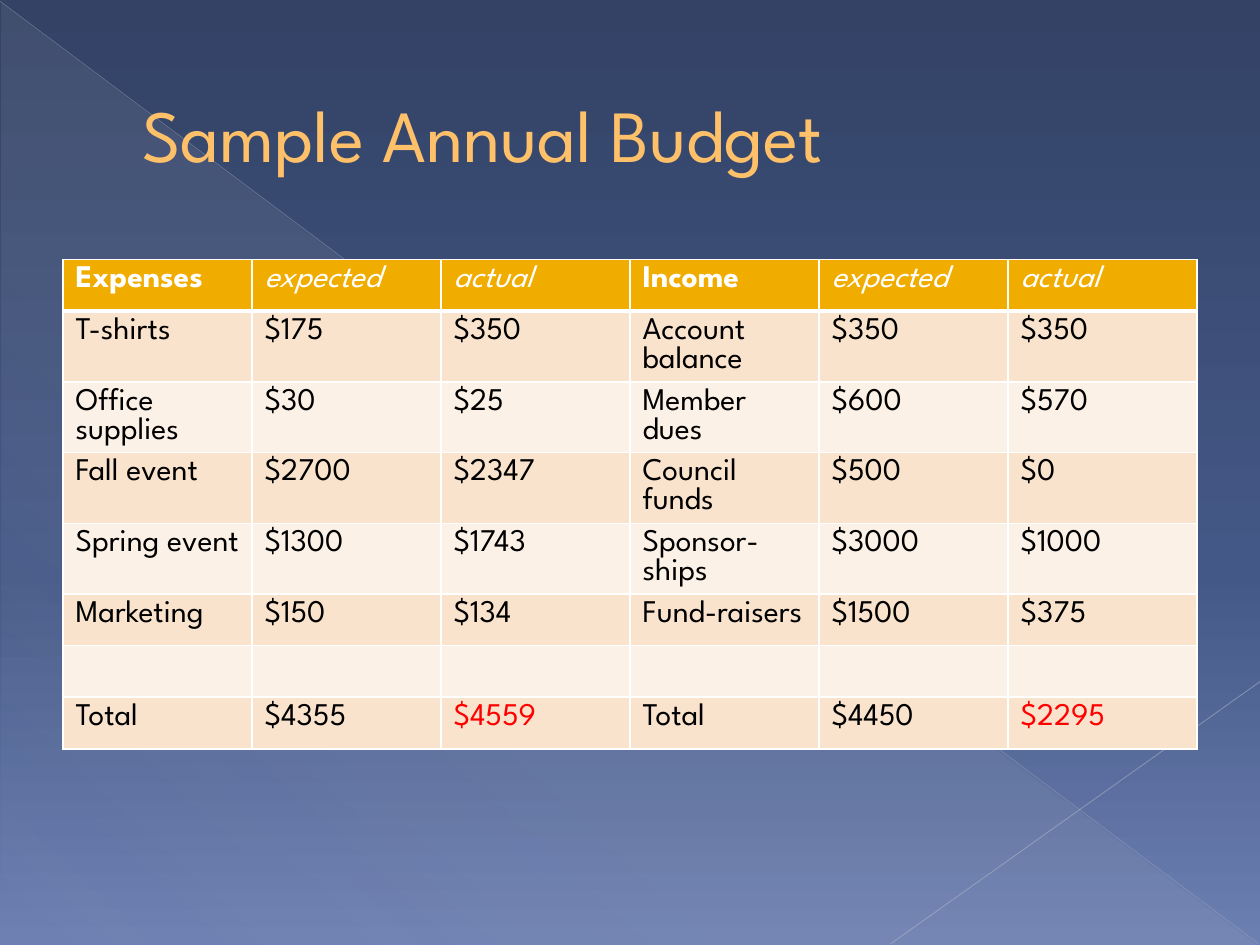
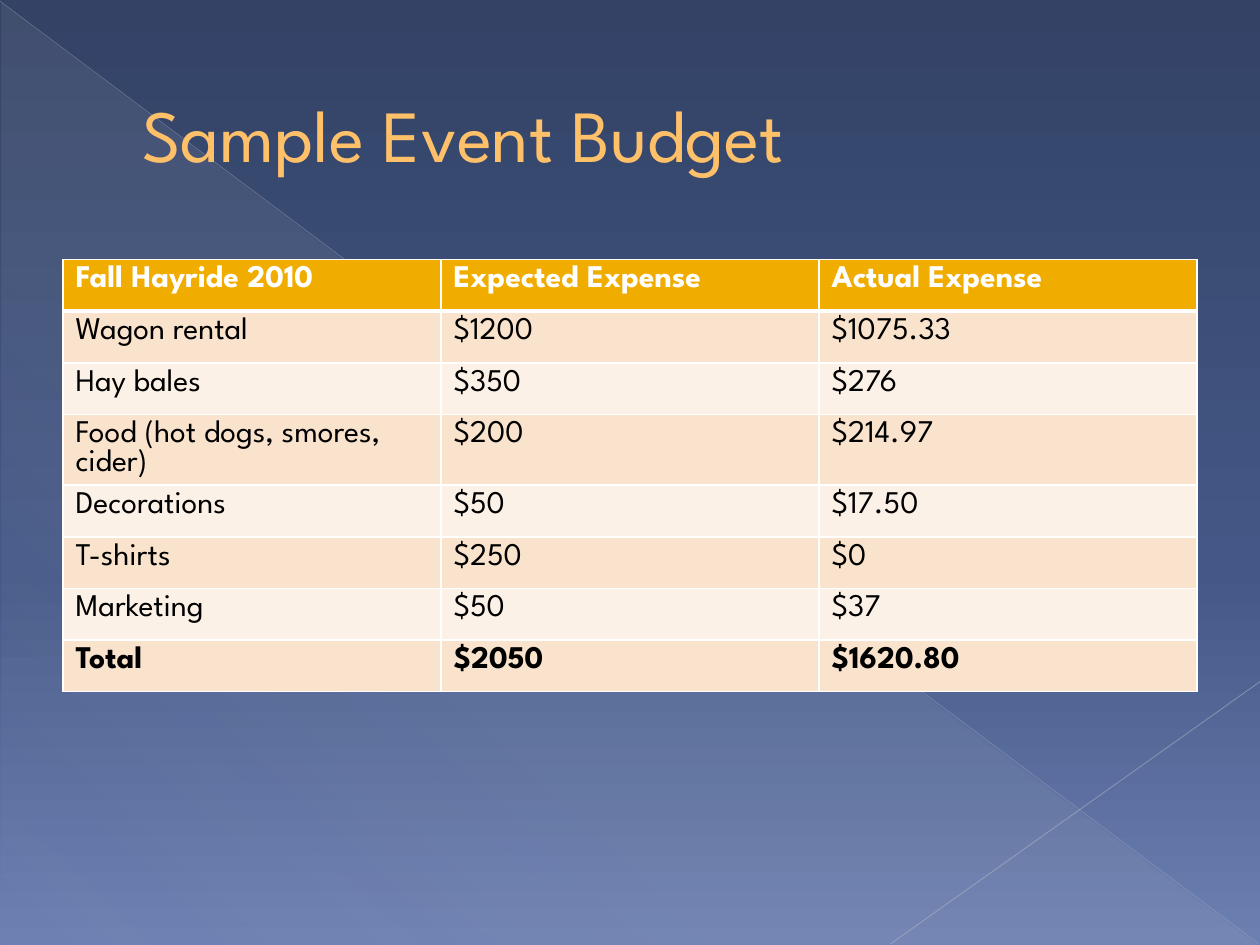
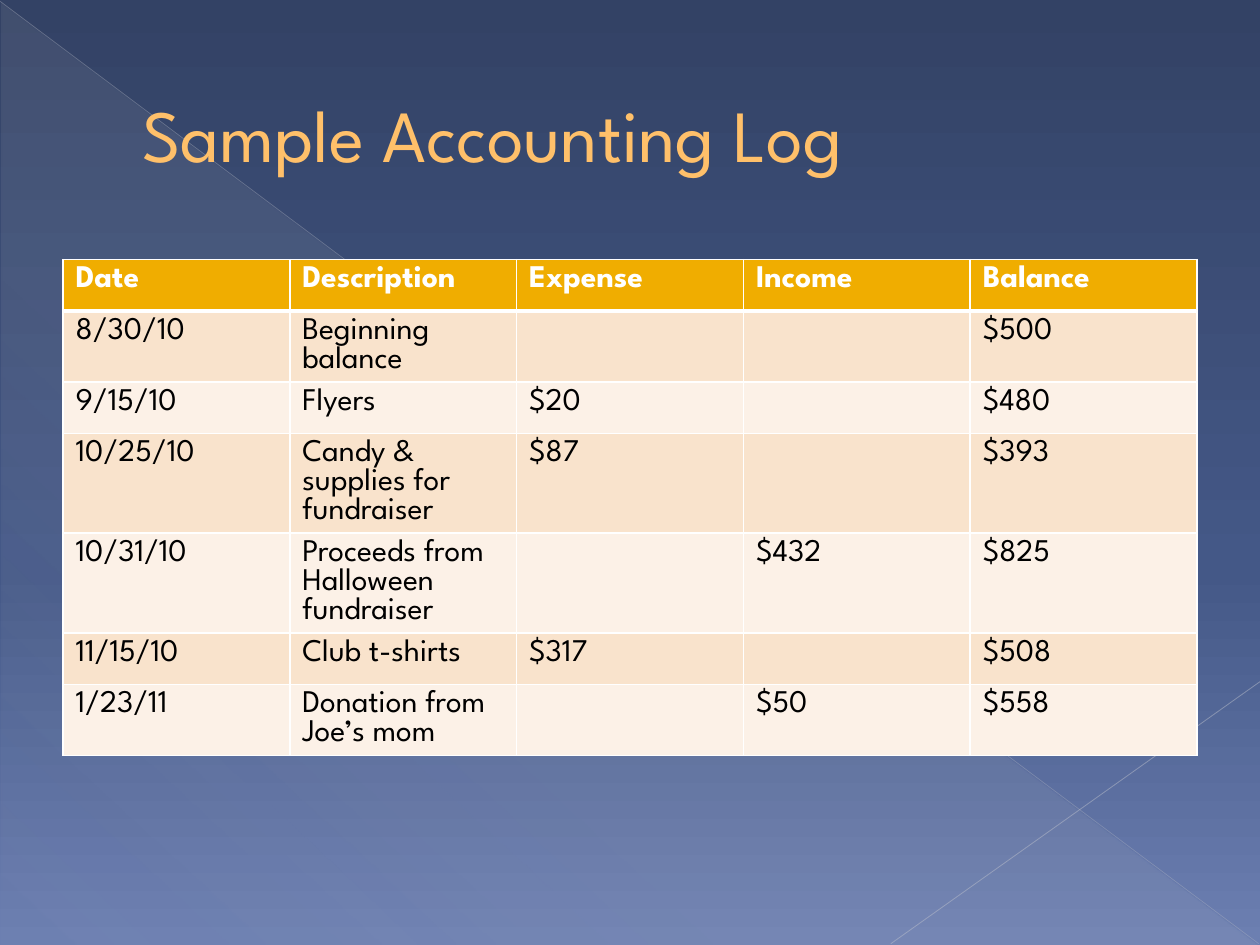
from dataclasses import dataclass
from typing import Optional

from lxml import etree
from pptx import Presentation
from pptx.dml.color import RGBColor
from pptx.enum.shapes import MSO_CONNECTOR, MSO_SHAPE
from pptx.enum.text import MSO_ANCHOR, MSO_AUTO_SIZE, PP_ALIGN
from pptx.oxml.ns import qn
from pptx.util import Inches, Pt

STRAIGHT = MSO_CONNECTOR.STRAIGHT
RIGHT_TRIANGLE = MSO_SHAPE.RIGHT_TRIANGLE
MIDDLE = MSO_ANCHOR.MIDDLE
NO_AUTOFIT = MSO_AUTO_SIZE.NONE
LEFT = PP_ALIGN.LEFT

FONT = "League Spartan"
WHITE = RGBColor(0xFF, 0xFF, 0xFF)
BLACK = RGBColor(0x00, 0x00, 0x00)
RED = RGBColor(0xFF, 0x00, 0x00)
GOLD = RGBColor(0xF0, 0xAD, 0x00)
BANDS = (RGBColor(0xF9, 0xE3, 0xCC), RGBColor(0xFC, 0xF1, 0xE7))
TITLE_COLOR = RGBColor(0xFF, 0xC0, 0x6A)
TITLE_OUTLINE = RGBColor(0xA6, 0x78, 0x00)
NAVY = RGBColor(0x33, 0x42, 0x65)
BLUE = RGBColor(0x44, 0x58, 0x87)
PALE_BLUE = RGBColor(0x6C, 0x7F, 0xB1)
MIST = RGBColor(0xD4, 0xD4, 0xD6)
DIAGONAL = RGBColor(0xB9, 0xBD, 0xC8)
CROSSING = RGBColor(0xC1, 0xC4, 0xCE)

TABLE_LEFT, TABLE_TOP, TABLE_WIDTH, ROW_HEIGHT = 0.5, 2.06, 9, 0.41


@dataclass
class Span:
    text: str
    bold: bool = False
    italic: bool = False
    color: Optional[RGBColor] = None


def bold(text):
    return Span(text, bold=True)


def italic(text):
    return Span(text, italic=True)


def red(text):
    return Span(text, color=RED)


def add_color(parent, color, opacity=100):
    node = etree.SubElement(parent, qn("a:srgbClr"), val=str(color))
    if opacity < 100:
        etree.SubElement(node, qn("a:alpha"), val=str(opacity * 1000))


def add_outline(parent, tag, color, width):
    line = etree.SubElement(parent, qn(tag), w=str(Pt(width)))
    add_color(etree.SubElement(line, qn("a:solidFill")), color)
    return line


def set_gradient(fill, owner, angle, stops):
    """Fill with (position, colour, opacity) stops; the angle runs clockwise."""
    fill.gradient()
    fill.gradient_angle = 360 - angle
    stop_list = owner.find(".//" + qn("a:gsLst"))
    for stop in list(stop_list):
        stop_list.remove(stop)
    for position, color, opacity in stops:
        stop = etree.SubElement(stop_list, qn("a:gs"), pos=str(position * 1000))
        add_color(stop, color, opacity)


class BudgetDeck:
    def __init__(self):
        self.deck = Presentation()
        self.deck.slide_width = Inches(10)
        self.deck.slide_height = Inches(7.5)
        self.slide = None
        master = self.deck.slide_master
        set_gradient(master.background.fill, master.element, 90,
                     [(0, NAVY, 100), (60, BLUE, 100), (100, PALE_BLUE, 100)])

    def add_slide(self, title):
        self.slide = self.deck.slides.add_slide(self.deck.slide_layouts[5])
        self.add_backdrop()
        self.add_title(title)

    def add_backdrop(self):
        triangle = self.slide.shapes.add_shape(
            RIGHT_TRIANGLE, Inches(0.01), Inches(0.02), Inches(9.98), Inches(7.48))
        triangle.shadow.inherit = False
        triangle.line.fill.background()
        set_gradient(triangle.fill, triangle.element, 133,
                     [(0, MIST, 10), (70, MIST, 8), (100, MIST, 1)])
        self.add_line((0, 0.01), (9.99, 7.49), DIAGONAL, 0.39, 35)
        self.add_line((10, 5.41), (7.07, 7.49), CROSSING, 0.47, 45)

    def add_line(self, start, end, color, width, opacity):
        line = self.slide.shapes.add_connector(
            STRAIGHT, *[Inches(value) for value in start + end])
        line.line.width = Pt(width)
        line.line.color.rgb = color
        color_node = line.element.spPr.find(".//" + qn("a:srgbClr"))
        etree.SubElement(color_node, qn("a:alpha"), val=str(opacity * 1000))
        etree.SubElement(line.element.spPr, qn("a:effectLst"))

    def add_title(self, text):
        box = self.slide.shapes.title
        box.element.getparent().append(box.element)  # in front of the backdrop
        box.left, box.top = Inches(0.5), Inches(0.29)
        box.width, box.height = Inches(9), Inches(1.53)
        frame = box.text_frame
        frame.word_wrap = True
        frame.auto_size = NO_AUTOFIT
        frame.vertical_anchor = MIDDLE
        para = frame.paragraphs[0]
        para.alignment = LEFT
        properties = para._p.get_or_add_pPr()
        properties.set("marL", str(Inches(0.53)))
        properties.set("indent", "0")
        run = self.add_run(para, Span(text, color=TITLE_COLOR), 42)
        outline = add_outline(run.font._element, "a:ln", TITLE_OUTLINE, 0.5)
        run.font._element.insert(0, outline)

    def add_run(self, para, span, size):
        run = para.add_run()
        run.text = span.text
        run.font.name = FONT
        run.font.size = Pt(size)
        run.font.bold = span.bold
        run.font.italic = span.italic
        run.font.color.rgb = span.color or BLACK
        return run

    def add_table(self, header, rows):
        """Rows hold plain strings, or spans where the text is styled."""
        header = [Span(span.text, span.bold, span.italic, WHITE) for span in header]
        grid = [header] + rows
        table = self.slide.shapes.add_table(
            len(grid), len(header), Inches(TABLE_LEFT), Inches(TABLE_TOP),
            Inches(TABLE_WIDTH), Inches(ROW_HEIGHT * len(grid))).table
        for column in table.columns:
            column.width = Inches(TABLE_WIDTH / len(header))
        for row_index, values in enumerate(grid):
            table.rows[row_index].height = Inches(ROW_HEIGHT)
            for column_index, value in enumerate(values):
                self.fill_cell(table.cell(row_index, column_index), value, row_index)

    def fill_cell(self, cell, value, row_index):
        top = 3 if row_index == 1 else 1
        bottom = 3 if row_index == 0 else 1
        properties = cell._tc.get_or_add_tcPr()
        for side, width in (("L", 1), ("R", 1), ("T", top), ("B", bottom)):
            add_outline(properties, "a:ln" + side, WHITE, width)
        cell.fill.solid()
        cell.fill.fore_color.rgb = BANDS[(row_index - 1) % 2] if row_index else GOLD
        para = cell.text_frame.paragraphs[0]
        if value:
            span = Span(value) if isinstance(value, str) else value
            self.add_run(para, span, 18)
        else:
            para.font.size = Pt(18)


def main():
    budget = BudgetDeck()

    budget.add_slide("Sample Annual Budget")
    budget.add_table(
        [bold("Expenses"), italic("expected"), italic("actual"),
         bold("Income"), italic("expected"), italic("actual")],
        [
            ["T-shirts", "$175", "$350", "Account balance", "$350", "$350"],
            ["Office supplies", "$30", "$25", "Member dues", "$600", "$570"],
            ["Fall event", "$2700", "$2347", "Council funds", "$500", "$0"],
            ["Spring event", "$1300", "$1743", "Sponsor-ships", "$3000", "$1000"],
            ["Marketing", "$150", "$134", "Fund-raisers", "$1500", "$375"],
            [""] * 6,
            ["Total", "$4355", red("$4559"), "Total", "$4450", red("$2295")],
        ])

    budget.add_slide("Sample Event Budget")
    budget.add_table(
        [bold("Fall Hayride 2010"), bold("Expected Expense"), bold("Actual Expense")],
        [
            ["Wagon rental", "$1200", "$1075.33"],
            ["Hay bales", "$350", "$276"],
            ["Food (hot dogs, smores, cider)", "$200", "$214.97"],
            ["Decorations", "$50", "$17.50"],
            ["T-shirts", "$250", "$0"],
            ["Marketing", "$50", "$37"],
            [bold("Total"), bold("$2050"), bold("$1620.80")],
        ])

    budget.add_slide("Sample Accounting Log")
    budget.add_table(
        [bold(name) for name in
         ("Date", "Description", "Expense", "Income", "Balance")],
        [
            ["8/30/10", "Beginning balance", "", "", "$500"],
            ["9/15/10", "Flyers", "$20", "", "$480"],
            ["10/25/10", "Candy & supplies for fundraiser", "$87", "", "$393"],
            ["10/31/10", "Proceeds from Halloween fundraiser", "", "$432", "$825"],
            ["11/15/10", "Club t-shirts", "$317", "", "$508"],
            ["1/23/11", "Donation from Joe’s mom", "", "$50", "$558"],
        ])

    budget.deck.save("out.pptx")


if __name__ == "__main__":
    main()
